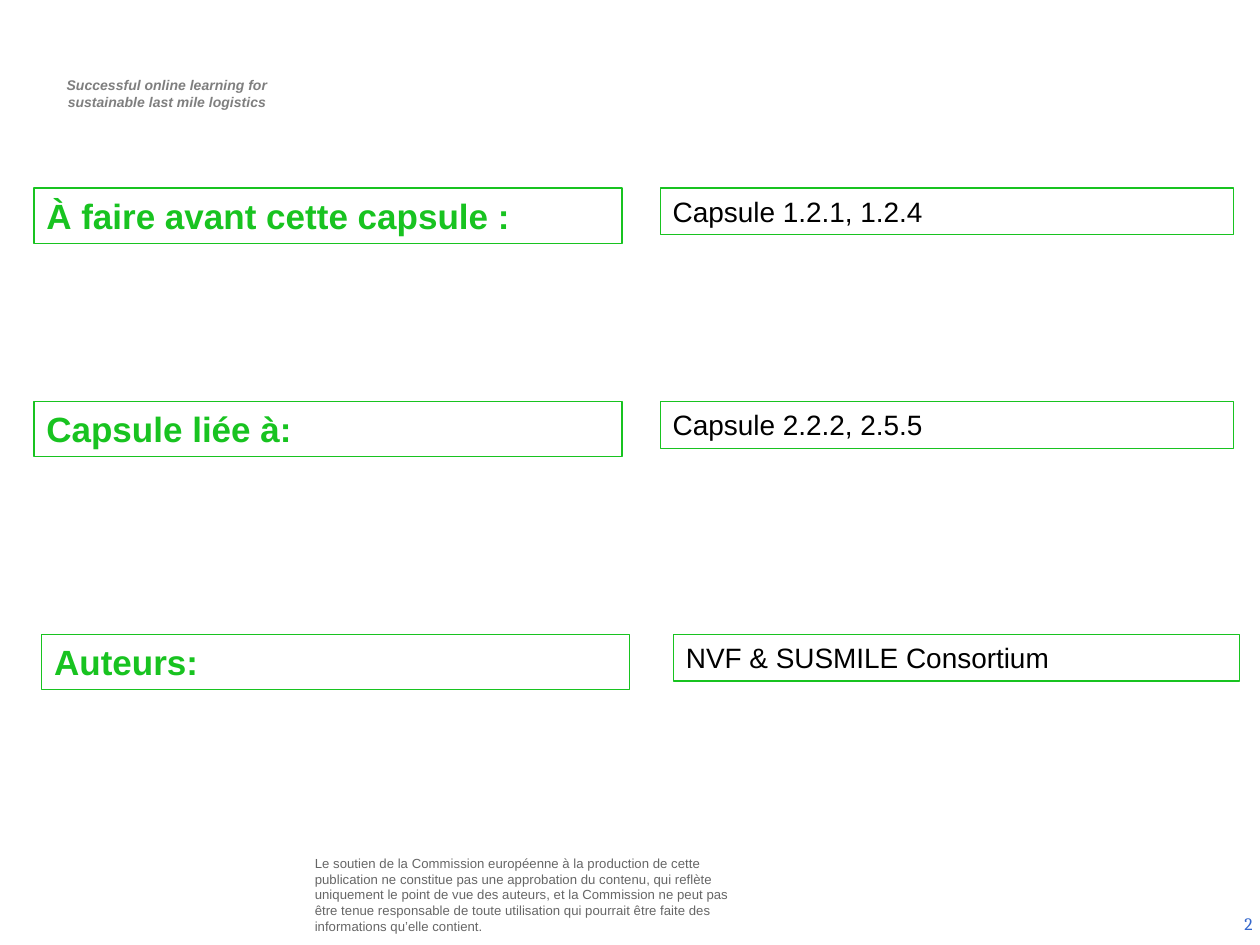
from pptx import Presentation
from pptx.dml.color import RGBColor
from pptx.enum.shapes import MSO_SHAPE
from pptx.enum.text import MSO_ANCHOR, PP_ALIGN
from pptx.util import Pt

GREEN = RGBColor(0x18, 0xC3, 0x20)
WHITE = RGBColor(0xFF, 0xFF, 0xFF)
BLACK = RGBColor(0, 0, 0)
GRAY = RGBColor(0x7F, 0x7F, 0x7F)
DARK_GRAY = RGBColor(0x66, 0x66, 0x66)
BLUE = RGBColor(0x33, 0x66, 0xCC)

TAGLINE = ["Successful online learning for", "sustainable last mile logistics"]
DISCLAIMER = (
    "Le soutien de la Commission européenne à la production de cette publication "
    "ne constitue pas une approbation du contenu, qui reflète uniquement le point "
    "de vue des auteurs, et la Commission ne peut pas être tenue responsable de "
    "toute utilisation qui pourrait être faite des informations qu’elle contient."
)
PAGE_NUMBER = "2"

LABEL_WIDTH, LABEL_HEIGHT, VALUE_HEIGHT = 336, 31.5, 26.7
# label, value, top, label left, value left, value width
ROWS = [
    ("À faire avant cette capsule :", "Capsule 1.2.1, 1.2.4", 107.5, 19.4, 377.3, 327.6),
    ("Capsule liée à:", "Capsule 2.2.2, 2.5.5", 229.5, 19.4, 377.3, 327.6),
    ("Auteurs:", "NVF & SUSMILE Consortium", 362.5, 23.8, 384.9, 323.3),
]


def write(box, lines, size, color, font="Arial", bold=False, italic=False,
          align=PP_ALIGN.LEFT, anchor=MSO_ANCHOR.TOP):
    frame = box.text_frame
    frame.word_wrap = True
    frame.vertical_anchor = anchor
    frame.text = "\n".join(lines)
    for para in frame.paragraphs:
        para.alignment = align
        para.font.name = font
        para.font.size = Pt(size)
        para.font.bold = bold
        para.font.italic = italic
        para.font.color.rgb = color


def add_text(page, left, top, width, height, lines, size, color, **style):
    box = page.shapes.add_textbox(Pt(left), Pt(top), Pt(width), Pt(height))
    write(box, lines, size, color, **style)
    return box


def add_framed_text(page, left, top, width, height, text, size, color, **style):
    box = page.shapes.add_shape(
        MSO_SHAPE.RECTANGLE, Pt(left), Pt(top), Pt(width), Pt(height))
    box.shadow.inherit = False
    box.fill.solid()
    box.fill.fore_color.rgb = WHITE
    box.line.color.rgb = GREEN
    box.line.width = Pt(0.75)
    write(box, [text], size, color, **style)


def main():
    deck = Presentation()
    deck.slide_width, deck.slide_height = Pt(720), Pt(540)
    page = deck.slides.add_slide(deck.slide_layouts[6])

    tagline = add_text(page, 21, 40.3, 146, 26.6, TAGLINE, 8, GRAY,
                       bold=True, italic=True, align=PP_ALIGN.CENTER)
    tagline.text_frame.margin_left = Pt(10)

    disclaimer = add_text(page, 177, 493.2, 248.4, 36, [DISCLAIMER], 7.5,
                          DARK_GRAY, anchor=MSO_ANCHOR.MIDDLE)
    frame = disclaimer.text_frame
    frame.margin_left = frame.margin_right = Pt(2.88)
    frame.margin_top = frame.margin_bottom = Pt(2.88)

    add_text(page, 555, 513.4, 167.8, 28.8, [PAGE_NUMBER], 10, BLUE,
             font="Cambria", align=PP_ALIGN.RIGHT, anchor=MSO_ANCHOR.MIDDLE)

    for label, value, top, label_left, value_left, value_width in ROWS:
        add_framed_text(page, label_left, top, LABEL_WIDTH, LABEL_HEIGHT,
                        label, 20, GREEN, bold=True)
        add_framed_text(page, value_left, top, value_width, VALUE_HEIGHT,
                        value, 16, BLACK)

    deck.save("out.pptx")


if __name__ == "__main__":
    main()
